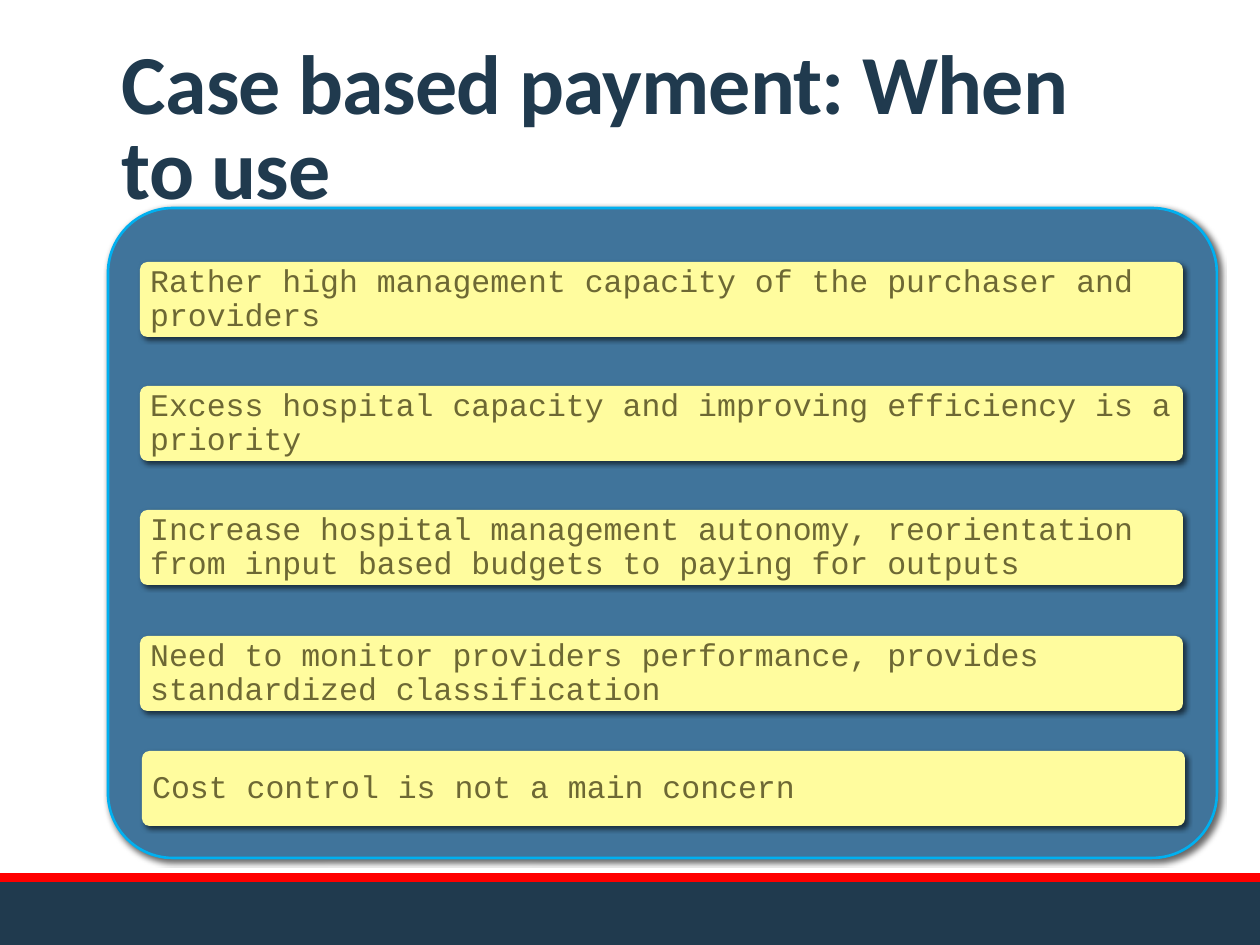
"""Build a slide listing when to use case based payment."""
from dataclasses import dataclass
from typing import Optional

import lxml.etree
import pptx
import pptx.dml.color
import pptx.enum.shapes
import pptx.enum.text
import pptx.oxml.ns
import pptx.util

RGBColor = pptx.dml.color.RGBColor
MSO_SHAPE = pptx.enum.shapes.MSO_SHAPE
MSO_ANCHOR = pptx.enum.text.MSO_ANCHOR
PP_ALIGN = pptx.enum.text.PP_ALIGN

NAVY = RGBColor(0x20, 0x3A, 0x4E)
RED = RGBColor(0xFF, 0x00, 0x00)
BLUE = RGBColor(0x40, 0x74, 0x9B)
CYAN = RGBColor(0x00, 0xB0, 0xF0)
YELLOW = RGBColor(0xFF, 0xFC, 0x9E)
OLIVE = RGBColor(0x6D, 0x68, 0x34)

PX_PER_INCH = 126


@dataclass(frozen=True)
class Box:
    left: int
    top: int
    width: int
    height: int


@dataclass(frozen=True)
class Card:
    left: int
    top: int
    text: str


CARDS = [
    Card(140, 262, "Rather high management capacity of the purchaser and providers"),
    Card(140, 386, "Excess hospital capacity and improving efficiency is a priority"),
    Card(140, 510, "Increase hospital management autonomy, reorientation "
                   "from input based budgets to paying for outputs"),
    Card(140, 636, "Need to monitor providers performance, provides "
                   "standardized classification"),
    Card(142, 751, "Cost control is not a main concern"),
]
CARD_WIDTH, CARD_HEIGHT = 1043, 75


def px(n: int) -> int:
    return round(n * 914400 / PX_PER_INCH)


def place(box: Box) -> tuple[int, int, int, int]:
    return px(box.left), px(box.top), px(box.width), px(box.height)


def add_shadow(sp) -> None:
    qn = pptx.oxml.ns.qn
    effects = sp._element.spPr.find(qn("a:effectLst"))
    shadow = lxml.etree.SubElement(
        effects, qn("a:outerShdw"), blurRad=str(pptx.util.Pt(3)),
        dist=str(pptx.util.Pt(2)), dir=str(45 * 60000), rotWithShape="0")
    color = lxml.etree.SubElement(shadow, qn("a:srgbClr"), val="000000")
    lxml.etree.SubElement(color, qn("a:alpha"), val="60000")


def add_block(s, box: Box, fill: RGBColor, line: Optional[RGBColor] = None,
              rounded: bool = False):
    kind = MSO_SHAPE.ROUNDED_RECTANGLE if rounded else MSO_SHAPE.RECTANGLE
    sp = s.shapes.add_shape(kind, *place(box))
    sp.shadow.inherit = False
    sp.fill.solid()
    sp.fill.fore_color.rgb = fill
    if line is None:
        sp.line.fill.background()
    else:
        sp.line.color.rgb = line
        sp.line.width = pptx.util.Pt(1.5)
    if rounded:
        sp.adjustments[0] = 0.1
        add_shadow(sp)
    return sp


def set_text(sp, text: str, *, font: str, size: int, color: RGBColor,
             anchor: MSO_ANCHOR, spacing: float, margins: tuple[int, int],
             bold: bool = False, tracking: float = 0) -> None:
    tf = sp.text_frame
    tf.word_wrap = True
    tf.vertical_anchor = anchor
    tf.margin_left = tf.margin_right = px(margins[0])
    tf.margin_top = tf.margin_bottom = px(margins[1])
    p = tf.paragraphs[0]
    p.alignment = PP_ALIGN.LEFT
    p.line_spacing = spacing
    r = p.add_run()
    r.text = text
    r.font.name = font
    r.font.size = pptx.util.Pt(size)
    r.font.bold = bold
    r.font.color.rgb = color
    if tracking:
        r._r.get_or_add_rPr().set("spc", str(round(tracking * 100)))


def add_card(s, card: Card) -> None:
    sp = add_block(s, Box(card.left, card.top, CARD_WIDTH, CARD_HEIGHT),
                   YELLOW, rounded=True)
    set_text(sp, card.text, font="Courier New", size=18, color=OLIVE,
             anchor=MSO_ANCHOR.MIDDLE, spacing=0.9, margins=(8, 7))


def main() -> None:
    prs = pptx.Presentation()
    prs.slide_width, prs.slide_height = px(1260), px(945)
    s = prs.slides.add_slide(prs.slide_layouts[6])

    add_block(s, Box(0, 882, 1260, 63), NAVY)
    add_block(s, Box(0, 873, 1260, 9), RED)

    title = s.shapes.add_textbox(*place(Box(110, 23, 1040, 200)))
    set_text(title, "Case based payment: When to use", font="Calibri", size=48,
             color=NAVY, anchor=MSO_ANCHOR.BOTTOM, spacing=0.85,
             margins=(12, 6), bold=True, tracking=-0.5)

    add_block(s, Box(108, 208, 1109, 650), BLUE, line=CYAN, rounded=True)
    for card in CARDS:
        add_card(s, card)

    prs.save("out.pptx")


if __name__ == "__main__":
    main()
